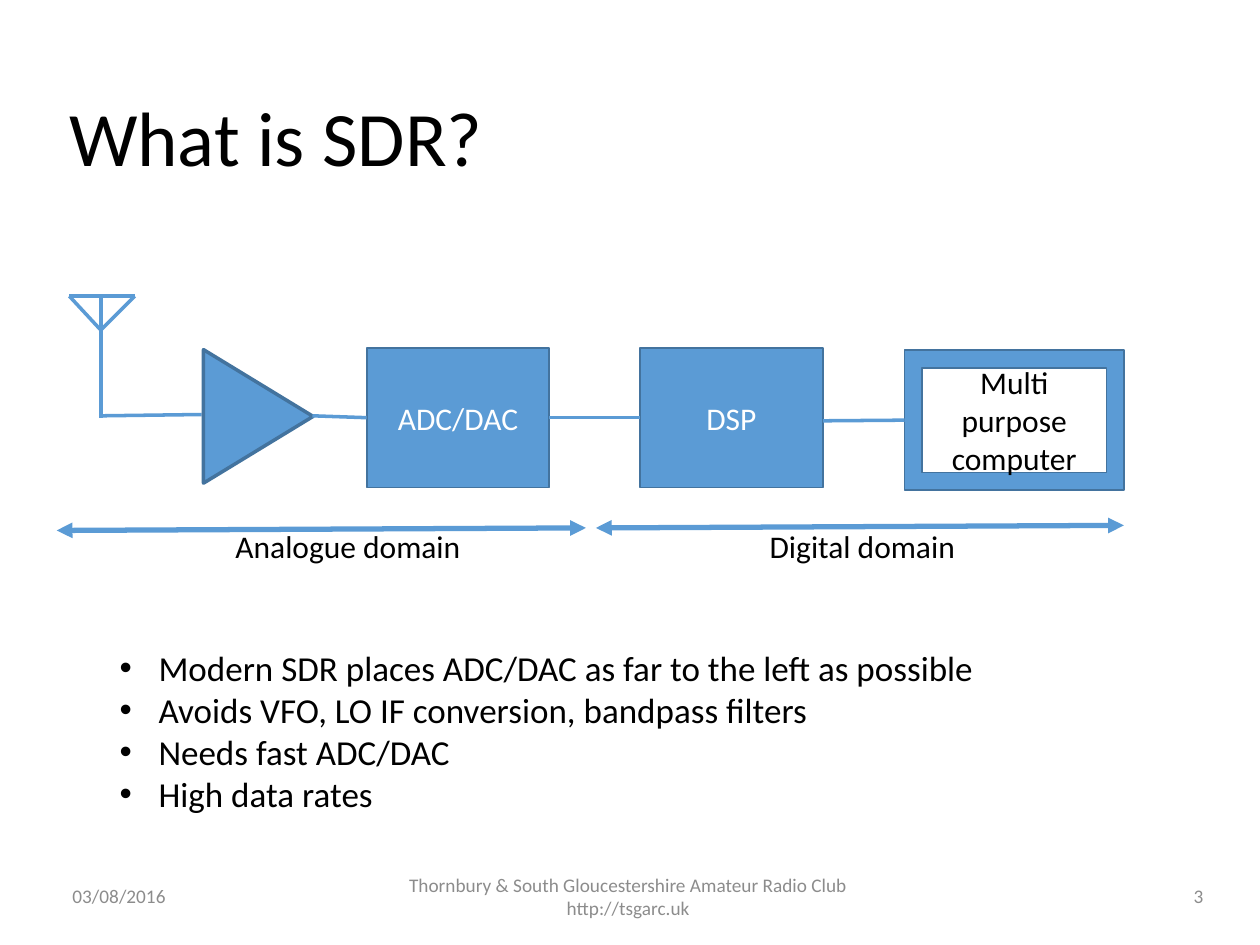
from dataclasses import dataclass

from lxml import etree
from pptx import Presentation
from pptx import util as u
from pptx.dml.color import RGBColor
from pptx.enum import shapes, text
from pptx.oxml import ns


@dataclass(frozen=True)
class Theme:
    """Colours, font and type sizes of the slide."""
    font: str = "Calibri"
    blue: str = "5B9BD5"
    edge: str = "43739E"
    ink: str = "000000"
    white: str = "FFFFFF"
    grey: str = "8C8C8C"
    title: int = 44
    body: int = 20
    label: int = 18
    footer: int = 11


THEME = Theme()
LEFT, CENTER, RIGHT = text.PP_ALIGN.LEFT, text.PP_ALIGN.CENTER, text.PP_ALIGN.RIGHT
MIDDLE, TOP = text.MSO_ANCHOR.MIDDLE, text.MSO_ANCHOR.TOP


def write(frame, wording, size, color, align=LEFT, anchor=MIDDLE, wrap=True):
    """Fill a text frame with evenly formatted paragraphs."""
    frame.text = wording
    frame.word_wrap = wrap
    frame.vertical_anchor = anchor
    for paragraph in frame.paragraphs:
        paragraph.alignment = align
        for run in paragraph.runs:
            run.font.name = THEME.font
            run.font.size = u.Pt(size)
            run.font.color.rgb = RGBColor.from_string(color)


def add_text(slide, box, wording, size, color=THEME.ink, **layout):
    """Add a text box and return its text frame."""
    frame = slide.shapes.add_textbox(*map(u.Inches, box)).text_frame
    write(frame, wording, size, color, **layout)
    return frame


def add_line(slide, x1, y1, x2, y2, width=2, arrows=False):
    """Draw a straight blue line, with arrowheads at both ends on request."""
    line = slide.shapes.add_connector(
        shapes.MSO_CONNECTOR.STRAIGHT, *map(u.Inches, (x1, y1, x2, y2)))
    line.line.color.rgb = RGBColor.from_string(THEME.blue)
    line.line.width = u.Pt(width)
    if arrows:
        for end in ("a:headEnd", "a:tailEnd"):
            etree.SubElement(line.line._get_or_add_ln(), ns.qn(end), type="triangle")
    etree.SubElement(line._element.spPr, ns.qn("a:effectLst"))
    return line


def add_stage(slide, kind, box, wording="", color=THEME.white, edge=1):
    """Add one filled stage of the signal chain."""
    stage = slide.shapes.add_shape(kind, *map(u.Inches, box))
    stage.shadow.inherit = False
    stage.fill.solid()
    stage.fill.fore_color.rgb = RGBColor.from_string(THEME.blue)
    stage.line.color.rgb = RGBColor.from_string(THEME.edge)
    stage.line.width = u.Pt(edge)
    if wording:
        write(stage.text_frame, wording, THEME.label, color, CENTER)
    return stage


def add_antenna(slide, box):
    """Draw the antenna: a crossbar, two slanted arms and a mast."""
    left, top, width, height = box
    mast, right, fork = left + 0.25, left + width, top + 0.27
    add_line(slide, left, top, right, top)
    add_line(slide, mast, top, mast, top + height)
    for tip in (left, right):
        add_line(slide, mast, fork, tip, top)


def add_signal_chain(slide, box):
    """Draw the chain from the antenna to the computer."""
    left, top, width, height = box
    kinds = shapes.MSO_SHAPE
    middle, block_top = top + 0.95, top + 0.41
    block_width, block_height = 1.45, 1.11
    add_antenna(slide, (left, top, 0.52, 0.97))
    add_line(slide, left + 0.26, middle, left + 1.05, middle - 0.01)
    amplifier = add_stage(
        slide, kinds.ISOSCELES_TRIANGLE, (left + 0.97, top + 0.52, 1.06, 0.87), edge=2)
    amplifier.rotation = 90
    converter, processor = (
        add_stage(slide, kinds.RECTANGLE,
                  (left + x, block_top, block_width, block_height), name)
        for x, name in ((2.36, "ADC/DAC"), (4.53, "DSP")))
    computer = add_stage(
        slide, kinds.FRAME, (left + width - 1.74, top + height - block_height, 1.74, block_height),
        "Multi purpose computer", THEME.ink)

    add_line(slide, left + 1.93, middle, left + 2.36, middle).end_connect(converter, 1)
    sampled = add_line(slide, left + 3.81, middle, left + 4.53, middle)
    sampled.begin_connect(converter, 3)
    sampled.end_connect(processor, 1)
    processed = add_line(slide, left + 5.98, top + 0.99, left + 6.63, top + 0.99)
    processed.end_connect(computer, 1)


def add_domain(slide, box, name, label_offset, label_width):
    """Draw a slightly rising double arrow with its domain name below."""
    left, top, width, height = box
    add_line(slide, left, top + 0.02, left + width, top, width=3, arrows=True)
    add_text(slide, (left + label_offset, 4.13, label_width, height),
             name, THEME.label, anchor=TOP, wrap=False)


def add_bullets(slide, box, points):
    """Add the bulleted remarks."""
    frame = add_text(slide, box, "\n".join(points), THEME.body, anchor=TOP)
    indent = u.Inches(0.31)
    for paragraph in frame.paragraphs:
        properties = paragraph._p.get_or_add_pPr()
        properties.set("marL", str(indent))
        properties.set("indent", str(-indent))
        etree.SubElement(properties, ns.qn("a:buFont"), typeface="Arial")
        etree.SubElement(properties, ns.qn("a:buChar"), char="•")


def add_footer(slide, box):
    """Add the date, the club and the slide number."""
    left, top, width, height = box
    for x, part_width, wording, align in (
            (0, 0.99, "03/08/2016", CENTER),
            (0.99, 7.09, "Thornbury & South Gloucestershire Amateur Radio Club\n"
                         "http://tsgarc.uk", CENTER),
            (width - 0.97, 0.97, "3", RIGHT)):
        add_text(slide, (left + x, top, part_width, height), wording,
                 THEME.footer, THEME.grey, align=align)


def main():
    """Build and save the slide."""
    deck = Presentation()
    deck.slide_width, deck.slide_height = u.Inches(10), u.Inches(7.5)
    slide = deck.slides.add_slide(deck.slide_layouts[6])
    title = add_text(slide, (0.45, 0.4, 7.75, 1.45), "What is SDR?", THEME.title)
    title.paragraphs[0].line_spacing = 0.9
    add_signal_chain(slide, (0.55, 2.35, 8.37, 1.54))
    add_domain(slide, (0.45, 4.19, 4.2, 0.4), "Analogue domain", 1.32, 2.01)
    add_domain(slide, (4.73, 4.17, 4.19, 0.4), "Digital domain", 1.28, 1.69)
    add_bullets(slide, (0.85, 5.08, 7.55, 1.45), (
        "Modern SDR places ADC/DAC as far to the left as possible",
        "Avoids VFO, LO IF conversion, bandpass filters",
        "Needs fast ADC/DAC",
        "High data rates"))
    add_footer(slide, (0.45, 6.87, 9.2, 0.48))
    deck.save("out.pptx")


if __name__ == "__main__":
    main()
